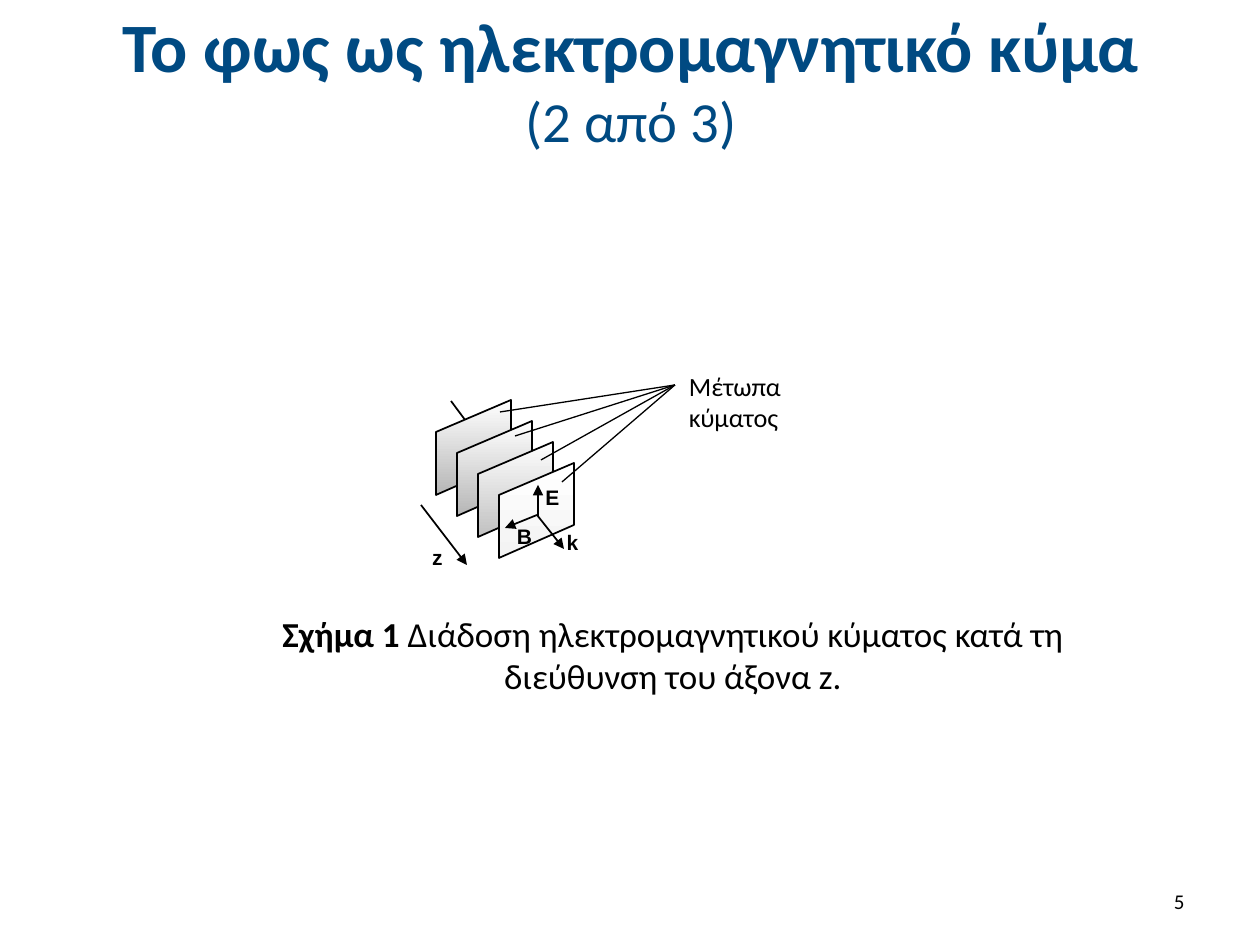
from lxml import etree
from pptx import Presentation
from pptx.dml.color import RGBColor
from pptx.enum.dml import MSO_THEME_COLOR
from pptx.enum.shapes import MSO_CONNECTOR
from pptx.enum.text import MSO_ANCHOR, MSO_AUTO_SIZE, PP_ALIGN
from pptx.oxml.ns import qn
from pptx.util import Pt

PX = 914400 // 126
STRAIGHT = MSO_CONNECTOR.STRAIGHT
TOP, MIDDLE = MSO_ANCHOR.TOP, MSO_ANCHOR.MIDDLE
LEFT, CENTER = PP_ALIGN.LEFT, PP_ALIGN.CENTER
RIGHT, JUSTIFY = PP_ALIGN.RIGHT, PP_ALIGN.JUSTIFY
COLORS = {"title": "004A82", "ink": "000000", "light": "FFFFFF"}
SHEET_SHADES = ["B6B6B6", "B6B6B6", "C1C1C1", "F3F3F3"]
SHEET_STEP = 21


def rgb(value):
    return RGBColor.from_string(value)


def add_run(p, text, color="ink", **font):
    r = p.add_run()
    r.text = text
    for name, value in {"name": "Calibri", "bold": False, **font}.items():
        setattr(r.font, name, value)
    r.font.color.rgb = rgb(COLORS[color])


def add_text(shapes, box, runs, align=LEFT, anchor=TOP, inset=True):
    tf = shapes.add_textbox(*[v * PX for v in box]).text_frame
    tf.word_wrap = True
    tf.vertical_anchor = anchor
    if not inset:
        for side in ("left", "top", "right", "bottom"):
            setattr(tf, f"margin_{side}", 0)
    p = tf.paragraphs[0]
    p.alignment = align
    for text, font in runs:
        add_run(p, text, **font)


def add_line(shapes, start, end, width=1, arrow=False):
    s = shapes.add_connector(STRAIGHT, *[v * PX for v in (*start, *end)])
    s.line.color.rgb = rgb(COLORS["ink"])
    s.line.width = Pt(width)
    if arrow:
        ln = s.line._get_or_add_ln()
        etree.SubElement(ln, qn("a:tailEnd"), type="triangle")
    etree.SubElement(s._element.spPr, qn("a:effectLst"))


def add_sheet(shapes, x, y, shade):
    builder = shapes.build_freeform(x, y + 32, scale=PX)
    builder.add_line_segments([(x, y + 95), (x + 75, y + 62), (x + 75, y)])
    s = builder.convert_to_shape()
    s.shadow.inherit = False
    s.fill.gradient()
    s.fill.gradient_angle = 270
    for stop, color in zip(s.fill.gradient_stops, (COLORS["light"], shade)):
        stop.color.theme_color = MSO_THEME_COLOR.BACKGROUND_1
        stop.color.rgb = rgb(color)
    for stop, position in zip(s.fill.gradient_stops, (0, 1)):
        stop.position = position
    s.line.color.rgb = rgb(COLORS["ink"])
    s.line.width = Pt(1)


def add_title(slide):
    s = slide.shapes.title
    s.left, s.top, s.width, s.height = [v * PX for v in (64, 16, 1134, 125)]
    tf = s.text_frame
    tf.auto_size = MSO_AUTO_SIZE.NONE
    tf.vertical_anchor = MIDDLE
    p = tf.paragraphs[0]
    p.alignment = CENTER
    add_run(p, "Το φως ως ηλεκτρομαγνητικό κύμα", "title", size=Pt(39.6), bold=True)
    p.add_line_break()
    add_run(p, "(2 από 3)", "title", size=Pt(32.4))


def add_wave_diagram(slide):
    shapes = slide.shapes.add_group_shape().shapes

    # Propagation axis behind the wavefronts
    add_line(shapes, (451, 401), (480, 440))
    for i, shade in enumerate(SHEET_SHADES):
        add_sheet(shapes, 436 + i * SHEET_STEP, 400 + i * SHEET_STEP, shade)

    # Pointers from the wavefronts to their label
    for start in [(500, 412), (515, 436), (541, 460), (562, 482)]:
        add_line(shapes, start, (675, 385), 0.75)
    add_text(shapes, (689, 370, 150, 67), [("Μέτωπα κύματος", {"size": Pt(15)})],
             JUSTIFY, inset=False)

    # Vectors k, B, E and the z axis
    for start, end in [((537, 515), (564, 549)), ((537, 515), (505, 528)),
                       ((538, 516), (538, 485)), ((421, 505), (467, 565))]:
        add_line(shapes, start, end, arrow=True)
    font = {"name": "Arial", "size": Pt(12), "bold": True}
    for text, x, y in [("Ε", 540, 485), ("Β", 512, 524), ("k", 560, 530), ("z", 425, 545)]:
        add_text(shapes, (x, y, 25, 30), [(text, font)], CENTER, inset=False)


def main():
    prs = Presentation()
    prs.slide_width, prs.slide_height = 1260 * PX, 945 * PX
    slide = prs.slides.add_slide(prs.slide_layouts[5])
    add_title(slide)
    add_wave_diagram(slide)

    # Caption and slide number
    caption = [("Σχήμα 1", {"size": Pt(20), "bold": True}),
               (" Διάδοση ηλεκτρομαγνητικού κύματος κατά τη διεύθυνση του άξονα z.",
                {"size": Pt(20)})]
    add_text(slide.shapes, (195, 606, 956, 97), caption, CENTER)
    add_text(slide.shapes, (903, 876, 294, 50), [("5", {"size": Pt(12)})], RIGHT, MIDDLE)
    prs.save("out.pptx")


if __name__ == "__main__":
    main()
